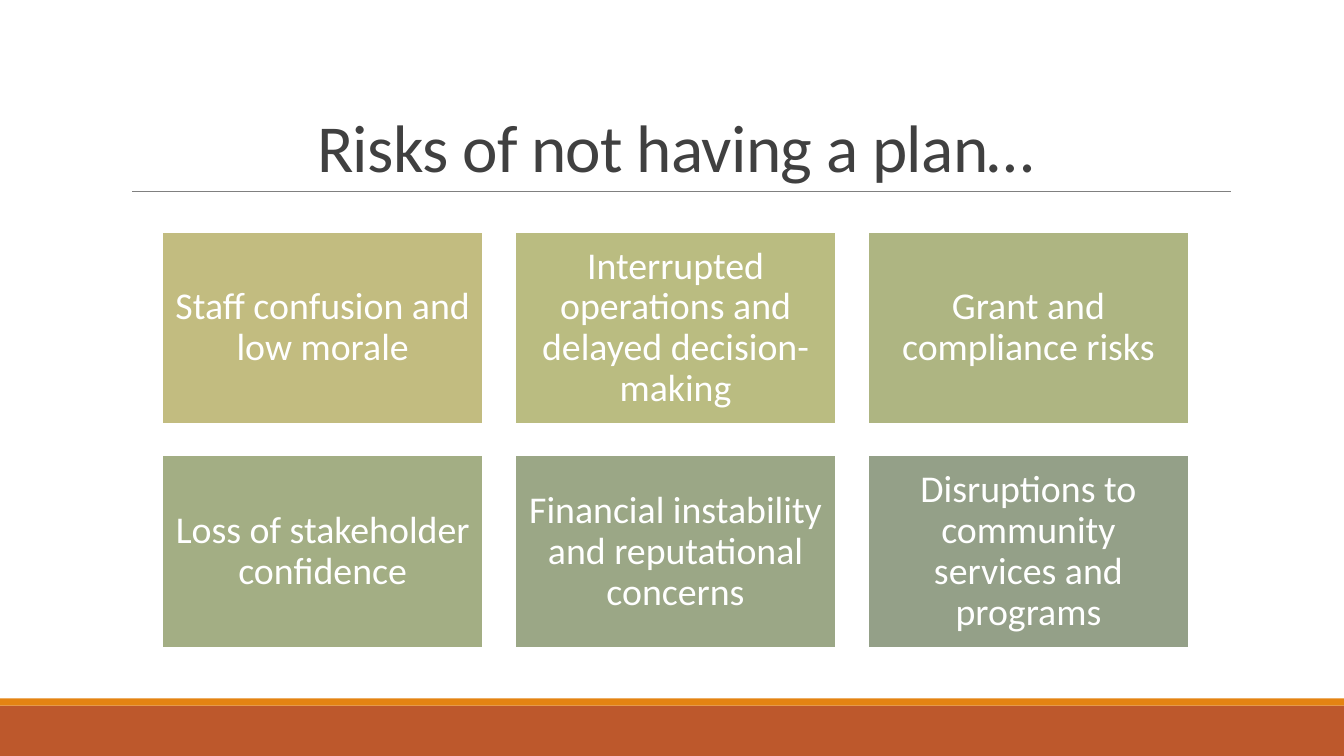
from dataclasses import dataclass

from lxml import etree
from pptx import Presentation
from pptx import util as u
from pptx.dml.color import RGBColor
from pptx.enum import shapes, text
from pptx.oxml import ns

FONT = "Calibri"
COLUMNS = 3
CARD_WIDTH, CARD_HEIGHT = 3.18, 1.91
CARD_LEFT, CARD_TOP = 1.61, 2.3
COLUMN_STEP, ROW_STEP = 3.5, 2.22
CARD_INSET = 0.11


@dataclass
class Box:
    left: float
    top: float
    width: float
    height: float
    fill: str


@dataclass
class Risk:
    label: str
    fill: str


BANDS = [
    Box(0, 7, 13.33, 0.5, "BD582C"),
    Box(0, 6.93, 13.33, 0.07, "E48312"),
]
RISKS = [
    Risk("Staff confusion and low morale", "C2BC80"),
    Risk("Interrupted operations and delayed decision-making", "BABC81"),
    Risk("Grant and compliance risks", "AEB582"),
    Risk("Loss of stakeholder confidence", "A3AE84"),
    Risk("Financial instability and reputational concerns", "9BA786"),
    Risk("Disruptions to community services and programs", "94A088"),
]


def set_color(color_format, value: str) -> None:
    color_format.rgb = RGBColor.from_string(value)


def write_text(frame, label: str, size: float, color: str, line_spacing: float):
    frame.word_wrap = True
    frame.auto_size = text.MSO_AUTO_SIZE.NONE
    paragraph = frame.paragraphs[0]
    paragraph.alignment = text.PP_ALIGN.CENTER
    paragraph.line_spacing = line_spacing
    run = paragraph.add_run()
    run.text = label
    run.font.name = FONT
    run.font.size = u.Pt(size)
    set_color(run.font.color, color)
    return run


def add_box(slide, box: Box):
    shape = slide.shapes.add_shape(
        shapes.MSO_SHAPE.RECTANGLE,
        u.Inches(box.left), u.Inches(box.top),
        u.Inches(box.width), u.Inches(box.height),
    )
    shape.shadow.inherit = False
    shape.fill.solid()
    set_color(shape.fill.fore_color, box.fill)
    shape.line.fill.background()
    return shape


def add_title(slide) -> None:
    title = slide.shapes.title
    title.left, title.top = u.Inches(1.2), u.Inches(0.31)
    title.width, title.height = u.Inches(11), u.Inches(1.59)
    frame = title.text_frame
    frame.vertical_anchor = text.MSO_ANCHOR.BOTTOM
    run = write_text(frame, "Risks of not having a plan…", 48, "404040", 0.85)
    run.font._element.set("spc", "-50")


def add_rule(slide) -> None:
    rule = slide.shapes.add_connector(
        shapes.MSO_CONNECTOR.STRAIGHT,
        u.Inches(1.31), u.Inches(1.9), u.Inches(12.21), u.Inches(1.9),
    )
    set_color(rule.line.color, "808080")
    rule.line.width = u.Pt(0.5)
    etree.SubElement(rule._element.spPr, ns.qn("a:effectLst"))


def add_risk(slide, index: int, risk: Risk) -> None:
    row, column = divmod(index, COLUMNS)
    left = CARD_LEFT + column * COLUMN_STEP
    top = CARD_TOP + row * ROW_STEP
    card = add_box(slide, Box(left, top, CARD_WIDTH, CARD_HEIGHT, risk.fill))
    set_color(card.line.color, "FFFFFF")
    card.line.width = u.Pt(1.25)
    frame = card.text_frame
    frame.vertical_anchor = text.MSO_ANCHOR.MIDDLE
    frame.margin_left = frame.margin_right = u.Inches(CARD_INSET)
    frame.margin_top = frame.margin_bottom = u.Inches(CARD_INSET)
    write_text(frame, risk.label, 27, "FFFFFF", 0.9)


def main() -> None:
    presentation = Presentation()
    presentation.slide_width = u.Inches(13.33)
    presentation.slide_height = u.Inches(7.5)
    slide = presentation.slides.add_slide(presentation.slide_layouts[5])
    for band in BANDS:
        add_box(slide, band)
    add_rule(slide)
    add_title(slide)
    for index, risk in enumerate(RISKS):
        add_risk(slide, index, risk)
    presentation.save("out.pptx")


if __name__ == "__main__":
    main()
